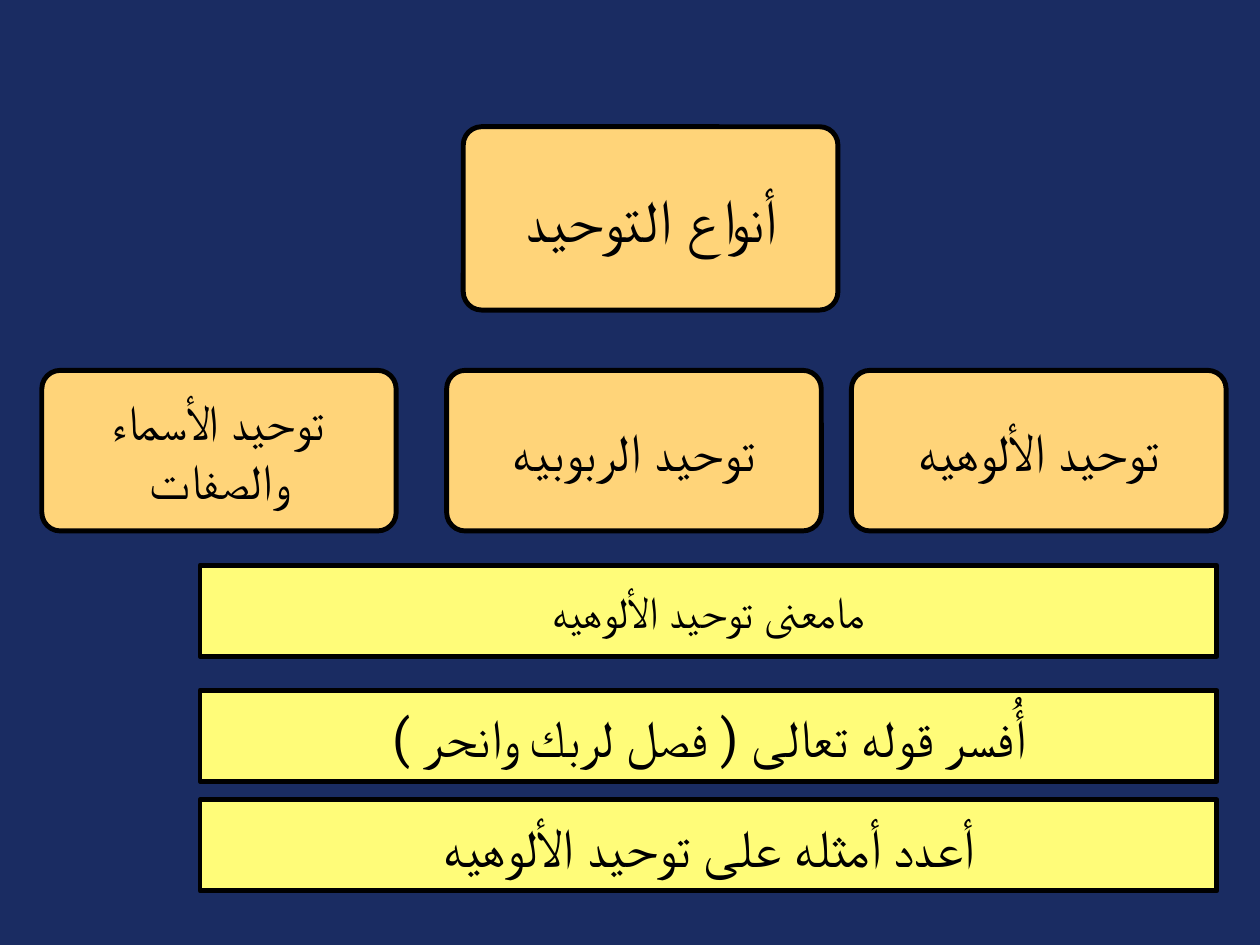
"""Build the slide on the kinds of tawhid, with three branches and three tasks."""
from lxml.etree import SubElement
from pptx import Presentation
from pptx.dml.color import RGBColor
from pptx.enum.shapes import MSO_SHAPE as SHAPE
from pptx.enum.text import MSO_ANCHOR as ANCHOR, PP_ALIGN as ALIGN
from pptx.oxml.ns import qn
from pptx.util import Pt

NAVY = RGBColor(0x1A, 0x2C, 0x62)
ORANGE = RGBColor(0xFF, 0xD4, 0x79)
YELLOW = RGBColor(0xFF, 0xFC, 0x79)
BLACK = RGBColor(0, 0, 0)
FONT = "Roboto"

prs = Presentation()
prs.slide_width, prs.slide_height = Pt(1024), Pt(768)
s = prs.slides.add_slide(prs.slide_layouts[6])
s.background.fill.solid()
s.background.fill.fore_color.rgb = NAVY


def add_box(kind, x, y, w, h, color, text, size):
    sp = s.shapes.add_shape(kind, Pt(x), Pt(y), Pt(w), Pt(h))
    sp.shadow.inherit = False
    sp.fill.solid()
    sp.fill.fore_color.rgb = color
    sp.line.color.rgb = BLACK
    sp.line.width = Pt(4)
    tf = sp.text_frame
    tf.word_wrap = True
    tf.vertical_anchor = ANCHOR.MIDDLE
    tf.margin_left = tf.margin_right = tf.margin_top = tf.margin_bottom = Pt(4)
    p = tf.paragraphs[0]
    p.alignment = ALIGN.CENTER
    p._p.get_or_add_pPr().set("rtl", "1")
    r = p.add_run()
    r.text = text
    r.font.size = Pt(size)
    r.font.name = FONT
    r.font.color.rgb = BLACK
    SubElement(r._r.get_or_add_rPr(), qn("a:cs"), typeface=FONT)
    return sp


head = add_box(SHAPE.ROUNDED_RECTANGLE, 376.5, 103, 304.5, 149, ORANGE, "أنواع التوحيد", 49)
head.adjustments[0] = 0.1

branches = [
    ("توحيد الأسماء والصفات", 288, 40),
    ("توحيد الربوبيه", 304.5, 43),
    ("توحيد الألوهيه", 304.5, 43),
]
for i, (text, width, size) in enumerate(branches):
    branch = add_box(SHAPE.ROUNDED_RECTANGLE, 34 + 329 * i, 301, width, 130.5, ORANGE, text, size)
    branch.adjustments[0] = 0.115

tasks = [
    ("مامعنى توحيد الألوهيه", 459.5, 36),
    ("أُفسر قوله تعالى ( فصل لربك وانحر )", 561, 43),
    ("أعدد أمثله على توحيد الألوهيه", 650, 44),
]
for text, top, size in tasks:
    add_box(SHAPE.RECTANGLE, 162.5, top, 826.5, 74, YELLOW, text, size)

prs.save("out.pptx")
